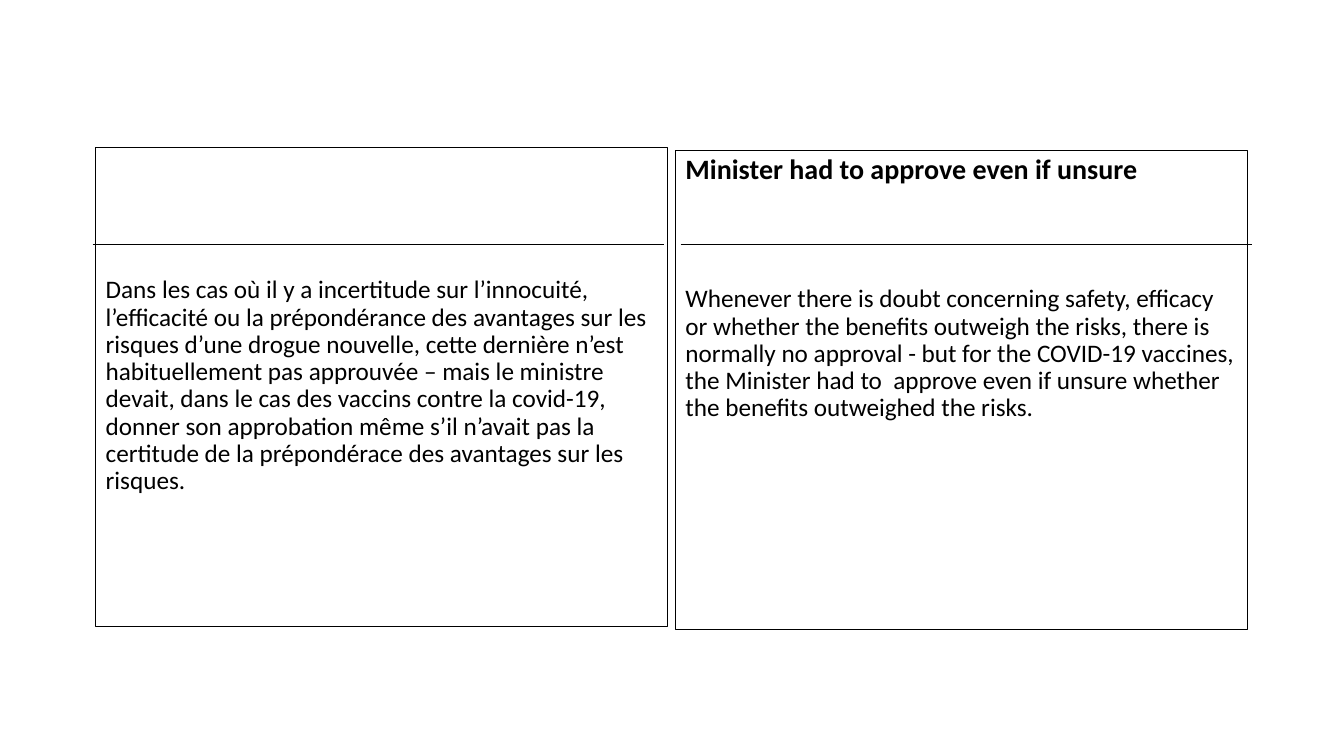
from dataclasses import dataclass

import pptx
import pptx.dml.color
import pptx.enum.shapes
import pptx.enum.text
import pptx.oxml.ns
import pptx.util
from lxml import etree
from pptx.util import Inches, Pt

COLORS = {"ink": "000000"}
FONT = "Calibri"
PANEL_WIDTH, PANEL_HEIGHT = 5.67, 4.76
RULE_TOP = 2.42


@dataclass
class TextBlock:
    text: str
    size: float = 18
    bold: bool = False
    space_before: float = 0


@dataclass
class Panel:
    left: float
    top: float
    rule_left: float
    text_inset: float
    blocks: list[TextBlock]


PANELS = [
    Panel(0.95, 1.46, 0.92, 1.29, [
        TextBlock(
            "Dans les cas où il y a incertitude sur l’innocuité, l’efficacité ou la "
            "prépondérance des avantages sur les risques d’une drogue nouvelle, cette "
            "dernière n’est habituellement pas approuvée – mais le ministre devait, dans "
            "le cas des vaccins contre la covid-19, donner son approbation même s’il "
            "n’avait pas la certitude de la prépondérace des avantages sur les risques."),
    ]),
    Panel(6.7, 1.49, 6.75, 0.05, [
        TextBlock("Minister had to approve even if unsure", size=20, bold=True),
        TextBlock(
            "Whenever there is doubt concerning safety, efficacy or whether the benefits "
            "outweigh the risks, there is normally no approval - but for the COVID-19 "
            "vaccines, the Minister had to  approve even if unsure whether the benefits "
            "outweighed the risks.", space_before=72),
    ]),
]


def color(name: str) -> pptx.dml.color.RGBColor:
    return pptx.dml.color.RGBColor.from_string(COLORS[name])


def draw_panel(slide: pptx.slide.Slide, panel: Panel) -> None:
    shape = slide.shapes.add_shape(
        pptx.enum.shapes.MSO_SHAPE.RECTANGLE, Inches(panel.left), Inches(panel.top),
        Inches(PANEL_WIDTH), Inches(PANEL_HEIGHT))
    shape.shadow.inherit = False
    shape.fill.background()
    shape.line.color.rgb = color("ink")
    shape.line.width = Pt(0.75)

    frame = shape.text_frame
    frame.word_wrap = True
    frame.vertical_anchor = pptx.enum.text.MSO_ANCHOR.TOP
    frame.margin_top = Inches(panel.text_inset)
    for index, block in enumerate(panel.blocks):
        paragraph = frame.add_paragraph() if index else frame.paragraphs[0]
        paragraph.text = block.text
        paragraph.alignment = pptx.enum.text.PP_ALIGN.LEFT
        paragraph.line_spacing = 0.9
        paragraph.space_before = Pt(block.space_before)
        paragraph.font.name = FONT
        paragraph.font.size = Pt(block.size)
        paragraph.font.bold = block.bold
        paragraph.font.color.rgb = color("ink")


def draw_rule(slide: pptx.slide.Slide, left: float) -> None:
    rule = slide.shapes.add_connector(
        pptx.enum.shapes.MSO_CONNECTOR.STRAIGHT, Inches(left), Inches(RULE_TOP),
        Inches(left + PANEL_WIDTH), Inches(RULE_TOP))
    rule.line.color.rgb = color("ink")
    rule.line.width = Pt(0.5)
    etree.SubElement(rule._element.spPr, pptx.oxml.ns.qn("a:effectLst"))


def main() -> None:
    presentation = pptx.Presentation()
    presentation.slide_width = Inches(13.33)
    presentation.slide_height = Inches(7.5)
    slide = presentation.slides.add_slide(presentation.slide_layouts[6])

    # Language panels
    for panel in PANELS:
        draw_panel(slide, panel)

    # Rules under the headings
    for panel in PANELS:
        draw_rule(slide, panel.rule_left)

    presentation.save("out.pptx")


if __name__ == "__main__":
    main()
